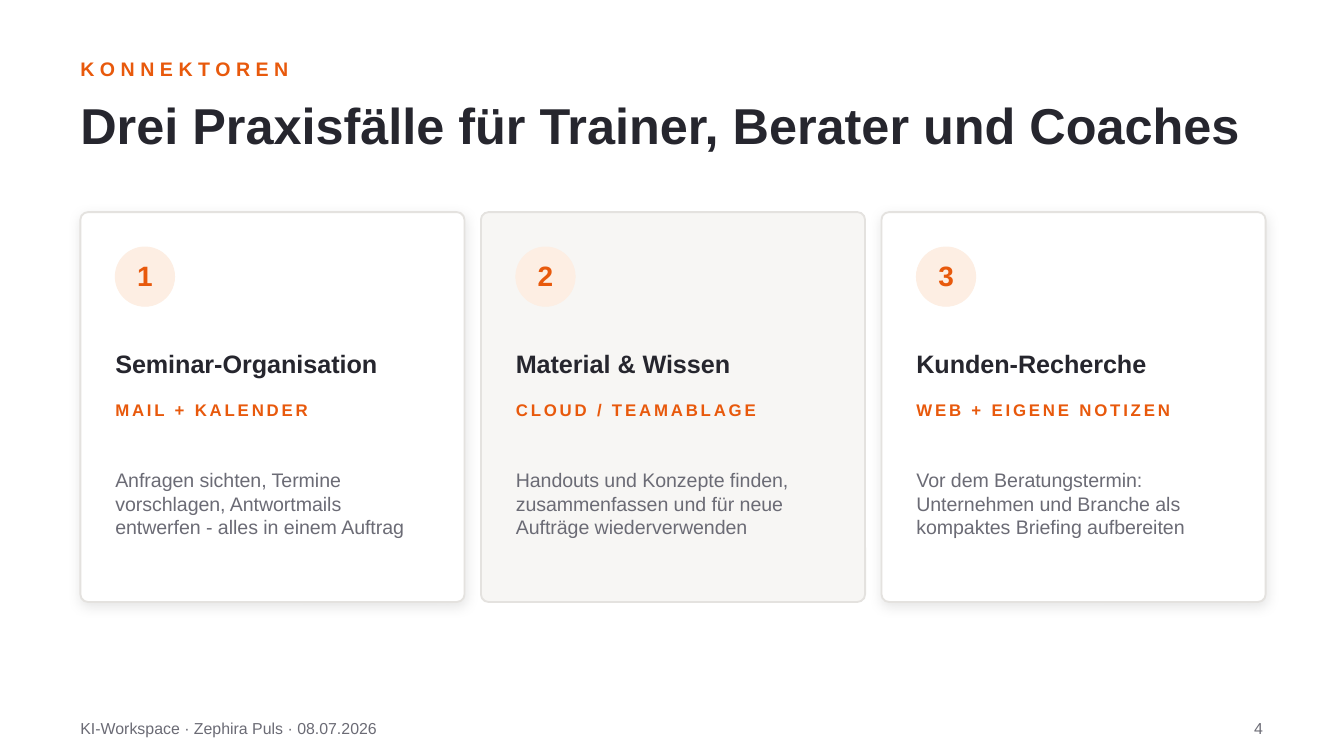
from lxml.etree import SubElement
from pptx import Presentation
from pptx.dml.color import RGBColor
from pptx.enum.shapes import MSO_SHAPE
from pptx.enum.text import MSO_ANCHOR, PP_ALIGN
from pptx.oxml.ns import qn
from pptx.util import Cm, Pt

# Content
KICKER = "KONNEKTOREN"
TITLE = "Drei Praxisfälle für Trainer, Berater und Coaches"
FOOTER = "KI-Workspace · Zephira Puls · 08.07.2026"
PAGE = "4"
CARDS = [
    ("Seminar-Organisation", "MAIL + KALENDER",
     "Anfragen sichten, Termine vorschlagen, Antwortmails entwerfen - alles in einem Auftrag"),
    ("Material & Wissen", "CLOUD / TEAMABLAGE",
     "Handouts und Konzepte finden, zusammenfassen und für neue Aufträge wiederverwenden"),
    ("Kunden-Recherche", "WEB + EIGENE NOTIZEN",
     "Vor dem Beratungstermin: Unternehmen und Branche als kompaktes Briefing aufbereiten"),
]
COLORS = {
    "accent": "E8590C", "tint": "FDEEE3", "dark": "26262E", "grey": "6B6B75",
    "border": "E4E2DF", "white": "FFFFFF", "soft": "F7F6F4", "shadow": "000000",
}

# Layout in cm
LEFT, WIDTH = 1.52, 22.35
CARD_TOP, CARD_W, CARD_H, GAP = 4.01, 7.26, 7.37, 0.31
PAD, BADGE = 0.66, 1.12


def color(name):
    return RGBColor.from_string(COLORS[name])


def add_text(s, text, x, y, w, h, size, ink, bold=False, spacing=0, align=PP_ALIGN.LEFT):
    tf = s.shapes.add_textbox(Cm(x), Cm(y), Cm(w), Cm(h)).text_frame
    tf.word_wrap = True
    tf.vertical_anchor = MSO_ANCHOR.MIDDLE
    tf.margin_left = tf.margin_right = tf.margin_top = tf.margin_bottom = 0
    p = tf.paragraphs[0]
    p.text = text
    p.alignment = align
    font = p.runs[0].font
    font.name, font.size, font.bold = "Arial", Pt(size), bold
    font.color.rgb = color(ink)
    if spacing:
        p.runs[0]._r.get_or_add_rPr().set("spc", str(int(spacing * 100)))


def add_panel(s, kind, x, y, w, h, fill, line, line_width):
    sp = s.shapes.add_shape(kind, Cm(x), Cm(y), Cm(w), Cm(h))
    sp.shadow.inherit = False
    sp.fill.solid()
    sp.fill.fore_color.rgb = color(fill)
    sp.line.color.rgb = color(line)
    sp.line.width = Pt(line_width)
    return sp


def add_shadow(sp):
    effects = sp._element.spPr.find(qn("a:effectLst"))
    shadow = SubElement(effects, qn("a:outerShdw"), blurRad=str(Pt(7)), dist=str(Pt(2)),
                        dir="5400000", algn="bl", rotWithShape="0")
    tone = SubElement(shadow, qn("a:srgbClr"), val=COLORS["shadow"])
    SubElement(tone, qn("a:alpha"), val="10000")


def add_card(s, i, heading, source, body):
    x = LEFT + i * (CARD_W + GAP)
    shaded = i % 2 == 1
    card = add_panel(s, MSO_SHAPE.ROUNDED_RECTANGLE, x, CARD_TOP, CARD_W, CARD_H,
                     "soft" if shaded else "white", "border", 1)
    card.adjustments[0] = 0.02
    if not shaded:
        add_shadow(card)

    # Number badge
    x, y = x + PAD, CARD_TOP + PAD
    add_panel(s, MSO_SHAPE.OVAL, x, y, BADGE, BADGE, "tint", "tint", 0.5)
    add_text(s, str(i + 1), x, y - 0.02, BADGE, BADGE, 15, "accent", True,
             align=PP_ALIGN.CENTER)

    # Card texts
    w = CARD_W - 2 * PAD
    add_text(s, heading, x, 6.17, w, 1.4, 13.5, "dark", True)
    add_text(s, source, x, 7.42, w, 0.66, 9, "accent", True, 1.5)
    add_text(s, body, x, 8.18, w, 2.67, 10.5, "grey")


prs = Presentation()
prs.slide_width, prs.slide_height = Cm(25.4), Cm(14.29)
s = prs.slides.add_slide(prs.slide_layouts[6])

# Header
add_text(s, KICKER, LEFT, 0.97, WIDTH, 0.66, 10.5, "accent", True, 3)
add_text(s, TITLE, LEFT, 1.57, WIDTH, 1.57, 27, "dark", True)

# Cards
for i, card in enumerate(CARDS):
    add_card(s, i, *card)

# Footer
add_text(s, FOOTER, LEFT, 13.46, 15.24, 0.61, 8.5, "grey")
add_text(s, PAGE, 22.35, 13.46, 1.52, 0.61, 8.5, "grey", align=PP_ALIGN.RIGHT)

prs.save("out.pptx")
